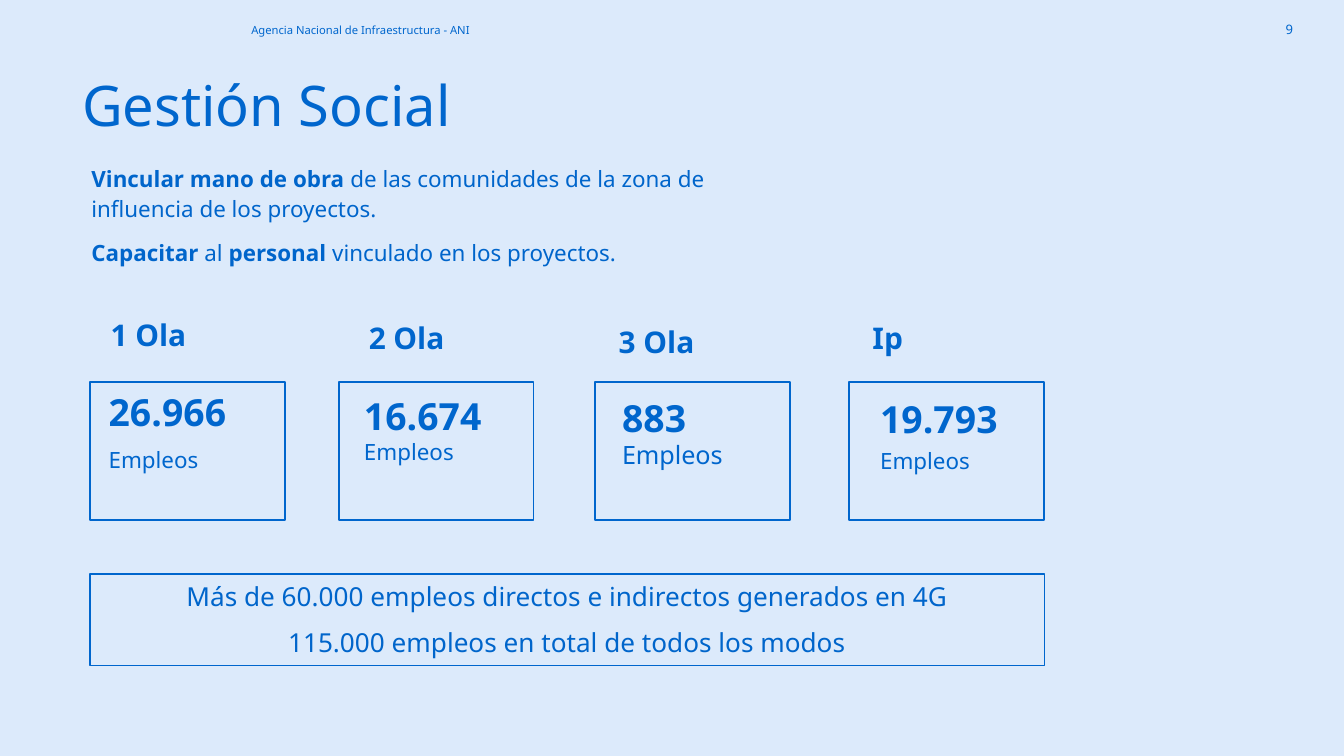
import pptx
import pptx.util
import pptx.oxml
import pptx.dml.color
import pptx.enum.shapes
import pptx.enum.text

Inches, Pt = pptx.util.Inches, pptx.util.Pt
ALIGN = pptx.enum.text.PP_ALIGN
ANCHOR = pptx.enum.text.MSO_ANCHOR
COLORS = {"background": "DCEAFB", "blue": "0066CD", "text": "0065CB"}
FONT = "Noto Sans"

TITLE = "Gestión Social"
AGENCY = "Agencia Nacional de Infraestructura - ANI"
PAGE = "9"
# Each paragraph is a list of (text, bold) pieces
GOALS = [
    [("Vincular mano de obra ", True),
     ("de las comunidades de la zona de influencia de los proyectos.", False)],
    [("Capacitar ", True), ("al ", False), ("personal ", True),
     ("vinculado en los proyectos.", False)],
]
TOTALS = ["Más de 60.000 empleos directos e indirectos generados en 4G",
          "115.000 empleos en total de todos los modos"]
UNIT = "Empleos"
# "name_at" and "count_at" are left, top of the text boxes; "lines" holds the
# line spacing of the count and of its unit, "gap" the space between them
WAVES = [
    dict(name="1 Ola", left=0.67, name_at=(0.67, 2.31), count="26.966", unit_size=12,
         count_at=(0.71, 2.95), lines=(Pt(16.5), Pt(16.5)), gap=4.5),
    dict(name="2 Ola", left=2.52, name_at=(2.59, 2.33), count="16.674", unit_size=12,
         count_at=(2.61, 2.98), lines=(Pt(16.5), 1.0), gap=0),
    dict(name="3 Ola", left=4.43, name_at=(4.45, 2.36), count="883", unit_size=13.5,
         count_at=(4.53, 2.89), lines=(1.0, 1.0), gap=0),
    dict(name="Ip", left=6.32, name_at=(6.17, 2.33), count="19.793", unit_size=12,
         count_at=(6.45, 2.9), lines=(1.0, 1.0), gap=3),
]
CARD_TOP, CARD_WIDTH, CARD_HEIGHT = 2.84, 1.45, 1.03


def rgb(name):
    return pptx.dml.color.RGBColor.from_string(COLORS[name])


def place(shape, left, top, width, height):
    shape.left, shape.top = Inches(left), Inches(top)
    shape.width, shape.height = Inches(width), Inches(height)


def set_frame(shape, anchor=ANCHOR.TOP, margins=(0.1, 0.05)):
    frame = shape.text_frame
    frame.word_wrap = True
    frame.auto_size = pptx.enum.text.MSO_AUTO_SIZE.NONE
    frame.vertical_anchor = anchor
    frame.margin_left = frame.margin_right = Inches(margins[0])
    frame.margin_top = frame.margin_bottom = Inches(margins[1])
    return frame


def style(run, size, bold=False, color="blue"):
    run.font.name, run.font.size, run.font.bold = FONT, Pt(size), bold
    run.font.color.rgb = rgb(color)


def write(frame, lines, sizes, bolds, align=ALIGN.LEFT, color="blue"):
    frame.text = "\n".join(lines)
    for paragraph, size, bold in zip(frame.paragraphs, sizes, bolds):
        paragraph.alignment = align
        style(paragraph.runs[0], size, bold, color)


def add_text(box, lines, sizes, bolds, align=ALIGN.LEFT, **frame_options):
    text = slide.shapes.add_textbox(*map(Inches, box))
    write(set_frame(text, **frame_options), lines, sizes, bolds, align)
    return text.text_frame


def add_outline(box, width):
    outline = slide.shapes.add_shape(
        pptx.enum.shapes.MSO_SHAPE.RECTANGLE, *map(Inches, box))
    outline.shadow.inherit = False
    outline.fill.background()
    outline.line.color.rgb = rgb("blue")
    outline.line.width = Pt(width)
    return outline


deck = pptx.Presentation()
deck.slide_width = Inches(10)
deck.slide_height = deck.slide_width * 9 // 16
slide = deck.slides.add_slide(deck.slide_layouts[1])
slide.background.fill.solid()
slide.background.fill.fore_color.rgb = rgb("background")

add_text((9.12, 0, 0.6, 0.43), [PAGE], [7], [False], ALIGN.RIGHT,
         anchor=ANCHOR.MIDDLE, margins=(0.1, 0.1))
add_text((1.8, 0.12, 2.03, 0.2), [AGENCY], [6], [False],
         anchor=ANCHOR.MIDDLE, margins=(0.07, 0.04))

title = slide.shapes.title
place(title, 0.54, 0.46, 4.71, 0.7)
write(set_frame(title, ANCHOR.MIDDLE, (0.07, 0.04)), [TITLE], [30], [False])
title.text_frame.paragraphs[0].line_spacing = 0.9

goals = slide.placeholders[1]
place(goals, 0.58, 1.16, 5.26, 0.87)
goals_frame = set_frame(goals)
goals_frame.text = "\n".join("" for _ in GOALS)
for paragraph, pieces in zip(goals_frame.paragraphs, GOALS):
    paragraph.line_spacing, paragraph.space_before = 1.1, Pt(8)
    properties = paragraph._p.get_or_add_pPr()
    properties.set("marL", "0")
    properties.set("indent", "0")
    properties.append(pptx.oxml.parse_xml(
        '<a:buNone xmlns:a="http://schemas.openxmlformats.org/drawingml/2006/main"/>'))
    for words, bold in pieces:
        run = paragraph.add_run()
        run.text = words
        style(run, 12, bold, "text")

totals = add_outline((0.67, 4.27, 7.1, 0.68), 0.75)
write(set_frame(totals), TOTALS, [14, 14], [False, False], ALIGN.CENTER, "text")
for paragraph in totals.text_frame.paragraphs:
    paragraph.space_before = Pt(8)

for wave in WAVES:
    add_outline((wave["left"], CARD_TOP, CARD_WIDTH, CARD_HEIGHT), 1)
    add_text((*wave["name_at"], 0.87, 0.44), [wave["name"]], [16], [True], ALIGN.CENTER)
    count = add_text((*wave["count_at"], 1.29, 0.8), [wave["count"], UNIT],
                     [20, wave["unit_size"]], [True, False])
    for paragraph, spacing in zip(count.paragraphs, wave["lines"]):
        paragraph.line_spacing = spacing
    count.paragraphs[1].space_before = Pt(wave["gap"])

deck.save("out.pptx")
